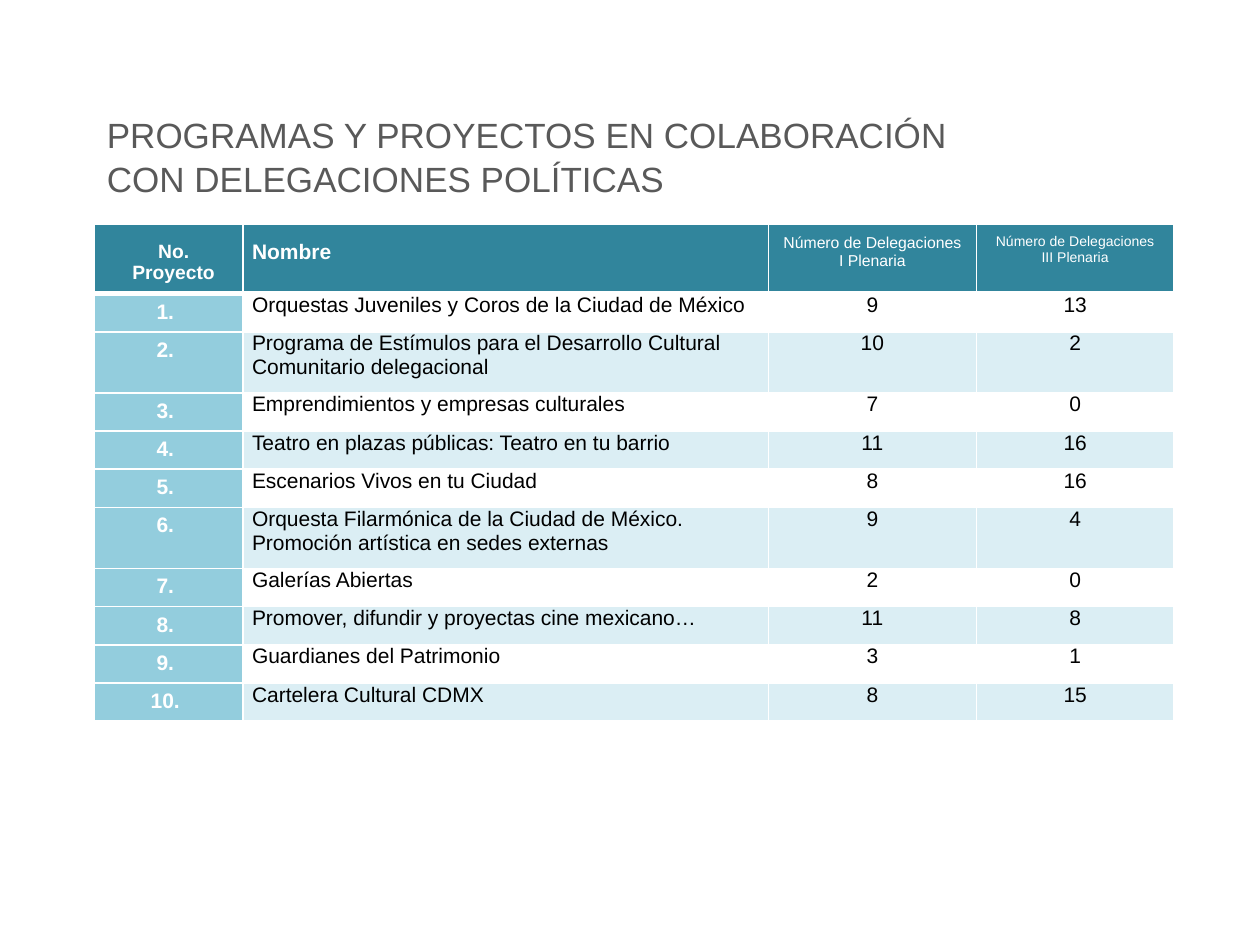
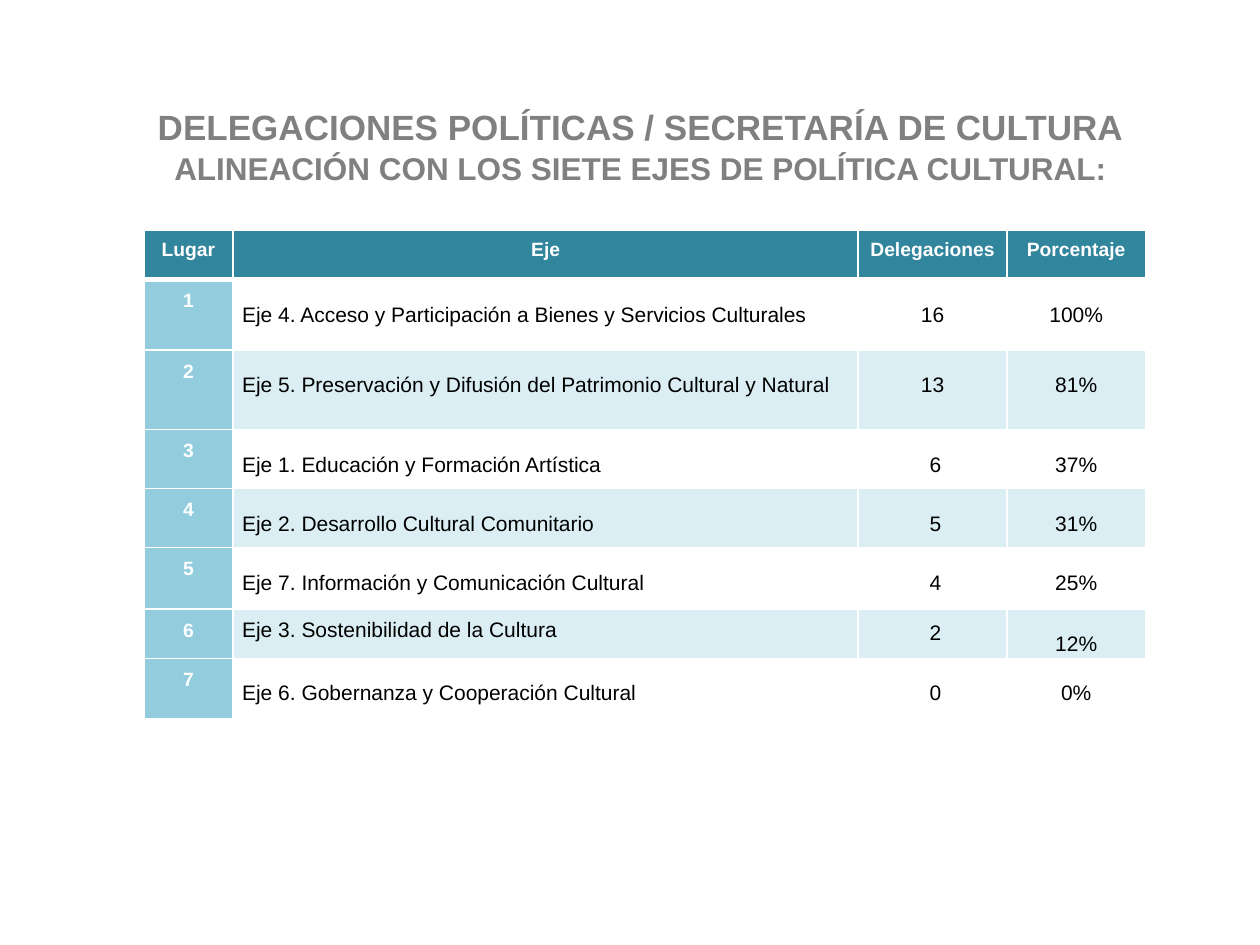
from dataclasses import dataclass, replace

from lxml.etree import SubElement
from pptx import Presentation
from pptx.dml.color import RGBColor
from pptx.enum.text import MSO_ANCHOR, MSO_AUTO_SIZE, PP_ALIGN
from pptx.oxml.ns import qn
from pptx.util import Cm, Pt

# Shared look
FONT = "Arial"
WHITE, BLACK = "FFFFFF", "000000"
HEADER_FILL, RANK_FILL, BAND_FILL = "31859C", "93CDDD", "DBEEF4"
LEFT, CENTER, JUSTIFY = PP_ALIGN.LEFT, PP_ALIGN.CENTER, PP_ALIGN.JUSTIFY

PROJECTS = [
    ("Orquestas Juveniles y Coros de la Ciudad de México", 9, 13),
    ("Programa de Estímulos para el Desarrollo Cultural Comunitario delegacional", 10, 2),
    ("Emprendimientos y empresas culturales", 7, 0),
    ("Teatro en plazas públicas: Teatro en tu barrio", 11, 16),
    ("Escenarios Vivos en tu Ciudad", 8, 16),
    ("Orquesta Filarmónica de la Ciudad de México. Promoción artística en sedes externas", 9, 4),
    ("Galerías Abiertas", 2, 0),
    ("Promover, difundir y proyectas cine mexicano…", 11, 8),
    ("Guardianes del Patrimonio", 3, 1),
    ("Cartelera Cultural CDMX", 8, 15),
]
TWO_LINE_PROJECTS = (2, 6)

AXES = [
    ("Eje 4. Acceso y Participación a Bienes y Servicios Culturales", "16", "100%"),
    ("Eje 5. Preservación y Difusión del Patrimonio Cultural y Natural", "13", "81%"),
    ("Eje 1. Educación y Formación Artística", " 6", "37%"),
    ("Eje 2. Desarrollo Cultural Comunitario", " 5", "31%"),
    ("Eje 7. Información y Comunicación Cultural", " 4", "25%"),
    ("Eje 3. Sostenibilidad de la Cultura", " 2", "12%"),
    ("Eje 6. Gobernanza y Cooperación Cultural", " 0", "0%"),
]
AXIS_ROW_HEIGHTS = [1.42, 1.6, 1.19, 1.19, 1.24, 0.99, 1.22]
COMPACT_AXIS = 6


@dataclass(frozen=True)
class CellStyle:
    size: float = 12
    color: str = BLACK
    bold: bool = False
    align: PP_ALIGN = CENTER
    spacing: float = 1.0
    left: float = 0.18
    top: float = 0
    right: float = 0.18


FIGURE = CellStyle()
HEADING = CellStyle(size=11, color=WHITE, bold=True)


def rgb(color):
    return RGBColor.from_string(color)


def format_font(font, size, color, bold):
    font.name, font.size, font.bold = FONT, Pt(size), bold
    font.color.rgb = rgb(color)


def add_title(slide, box, lines, sizes, color, bold=False, align=LEFT):
    """Fill the title placeholder with lines that are split by line breaks."""
    title = slide.shapes.title
    title.left, title.top, title.width, title.height = map(Cm, box)
    frame = title.text_frame
    frame.word_wrap = True
    frame.auto_size = MSO_AUTO_SIZE.NONE
    frame.vertical_anchor = MSO_ANCHOR.MIDDLE
    paragraph = frame.paragraphs[0]
    paragraph.text = "\n".join(lines)
    paragraph.alignment = align
    paragraph.line_spacing = 1.05
    for run, size in zip(paragraph.runs, sizes):
        format_font(run.font, size, color, bold)


def add_borders(cell, row):
    """White cell borders, with a thick rule under the header row."""
    widths = {
        "a:lnL": 1,
        "a:lnR": 1,
        "a:lnT": 3 if row == 1 else 1,
        "a:lnB": 3 if row == 0 else 1,
    }
    properties = cell._tc.get_or_add_tcPr()
    for side, width in widths.items():
        line = SubElement(properties, qn(side), w=str(Pt(width)))
        fill = SubElement(line, qn("a:solidFill"))
        SubElement(fill, qn("a:srgbClr"), val=WHITE)


def fill_cell(cell, text, style):
    cell.margin_left, cell.margin_right = Cm(style.left), Cm(style.right)
    cell.margin_top, cell.margin_bottom = Cm(style.top), 0
    cell.vertical_anchor = MSO_ANCHOR.TOP
    cell.text_frame.text = str(text)
    for paragraph in cell.text_frame.paragraphs:
        paragraph.alignment = style.align
        paragraph.line_spacing = style.spacing
        for run in paragraph.runs:
            format_font(run.font, style.size, style.color, style.bold)


def cell_fill(row, column):
    if row == 0:
        return HEADER_FILL
    if column == 0:
        return RANK_FILL
    return WHITE if row % 2 else BAND_FILL


def add_ranking_table(slide, left, top, widths, heights, rows):
    """Draw rows of (text, style) pairs; the first row is the header."""
    frame = slide.shapes.add_table(
        len(heights), len(widths), Cm(left), Cm(top), Cm(sum(widths)), Cm(sum(heights)))
    table = frame.table
    table.first_row = table.horz_banding = False
    for column, width in zip(table.columns, widths):
        column.width = Cm(width)
    for table_row, height in zip(table.rows, heights):
        table_row.height = Cm(height)
    for r, row in enumerate(rows):
        for c, (text, style) in enumerate(row):
            cell = table.cell(r, c)
            add_borders(cell, r)
            cell.fill.solid()
            cell.fill.fore_color.rgb = rgb(cell_fill(r, c))
            fill_cell(cell, text, style)


def build_projects(slide):
    add_title(slide, (1.9, 1.55, 21.82, 3.18),
              ["PROGRAMAS Y PROYECTOS EN COLABORACIÓN", "CON DELEGACIONES POLÍTICAS"],
              (20, 20), "595959")

    # Header cells start a little below the top edge
    plenary = replace(HEADING, size=9, bold=False, top=0.2)
    rows = [[
        ("No. Proyecto", replace(HEADING, left=0.4, top=0.33, right=0.2)),
        ("Nombre", replace(HEADING, size=12, align=LEFT, top=0.33)),
        ("Número de Delegaciones\nI Plenaria", plenary),
        ("Número de Delegaciones\nIII Plenaria", replace(plenary, size=8)),
    ]]
    number_style = replace(HEADING, size=12, top=0.13, right=0.2)
    name_style = replace(FIGURE, align=LEFT)
    heights = [1.4]
    for number, (name, first, third) in enumerate(PROJECTS, 1):
        rows.append([(f"{number}. ", number_style), (name, name_style),
                     (first, FIGURE), (third, FIGURE)])
        heights.append(1.23 if number in TWO_LINE_PROJECTS else 0.77)
    add_ranking_table(slide, 1.9, 4.52, [3, 10.59, 4.19, 3.99], heights, rows)


def build_axes(slide):
    add_title(slide, (1.7, 1.5, 22.43, 2.84),
              ["DELEGACIONES POLÍTICAS / SECRETARÍA DE CULTURA",
               "ALINEACIÓN CON LOS SIETE EJES DE POLÍTICA CULTURAL:"],
              (20, 18), "808080", bold=True, align=CENTER)

    header_style = replace(HEADING, spacing=1.4)
    rows = [[(label, header_style)
             for label in ("Lugar", "Eje", "Delegaciones", "Porcentaje")]]
    place_style = replace(HEADING, spacing=1.5)
    for place, (axis, boroughs, share) in enumerate(AXES, 1):
        axis_spacing, count_spacing = (1.4, 1.5) if place == COMPACT_AXIS else (2.0, 2.0)
        rows.append([
            (place, place_style),
            (axis, replace(FIGURE, align=JUSTIFY, spacing=axis_spacing)),
            (boroughs, replace(FIGURE, spacing=count_spacing)),
            (share, replace(FIGURE, spacing=2.0)),
        ])
    add_ranking_table(slide, 2.9, 4.65, [1.8, 12.6, 3, 2.79],
                      [0.99] + AXIS_ROW_HEIGHTS, rows)


def main():
    deck = Presentation()
    deck.slide_width, deck.slide_height = Cm(25.4), Cm(19.05)
    title_only = deck.slide_layouts[5]
    for build in (build_projects, build_axes):
        build(deck.slides.add_slide(title_only))
    deck.save("out.pptx")


if __name__ == "__main__":
    main()
